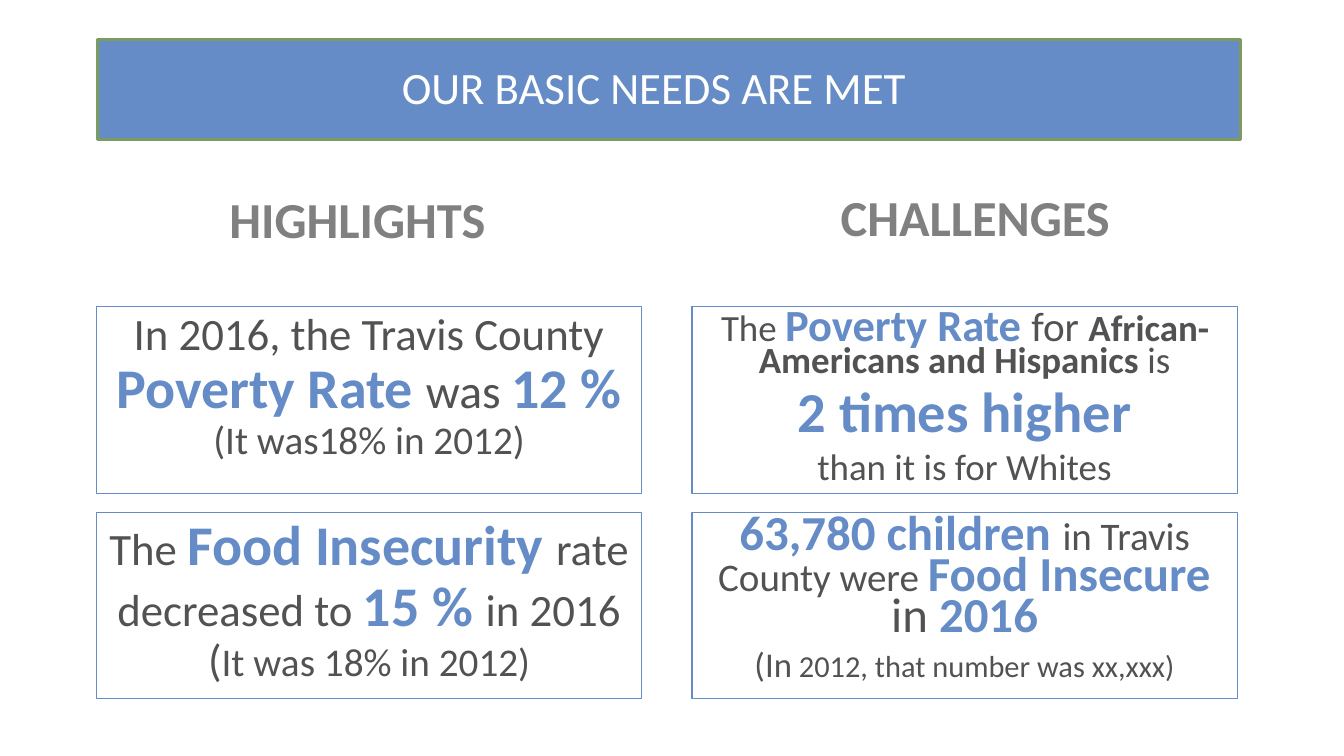
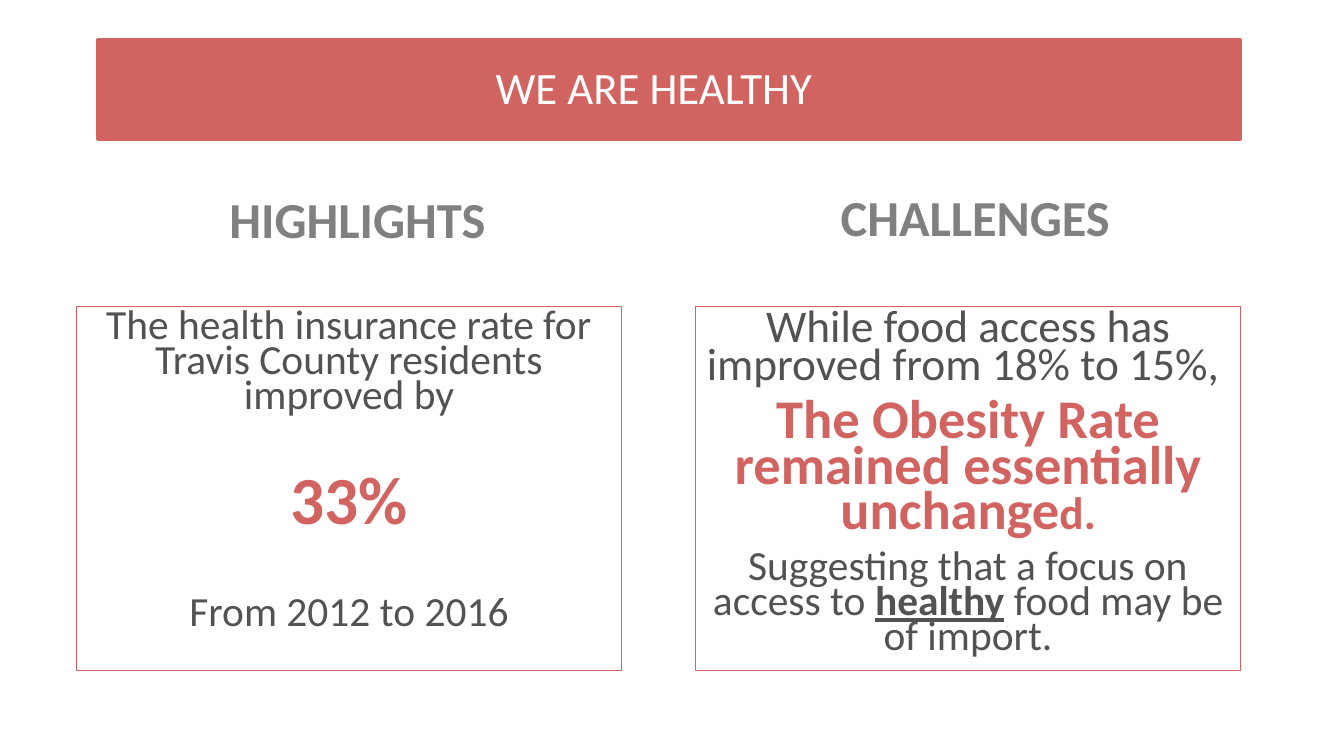
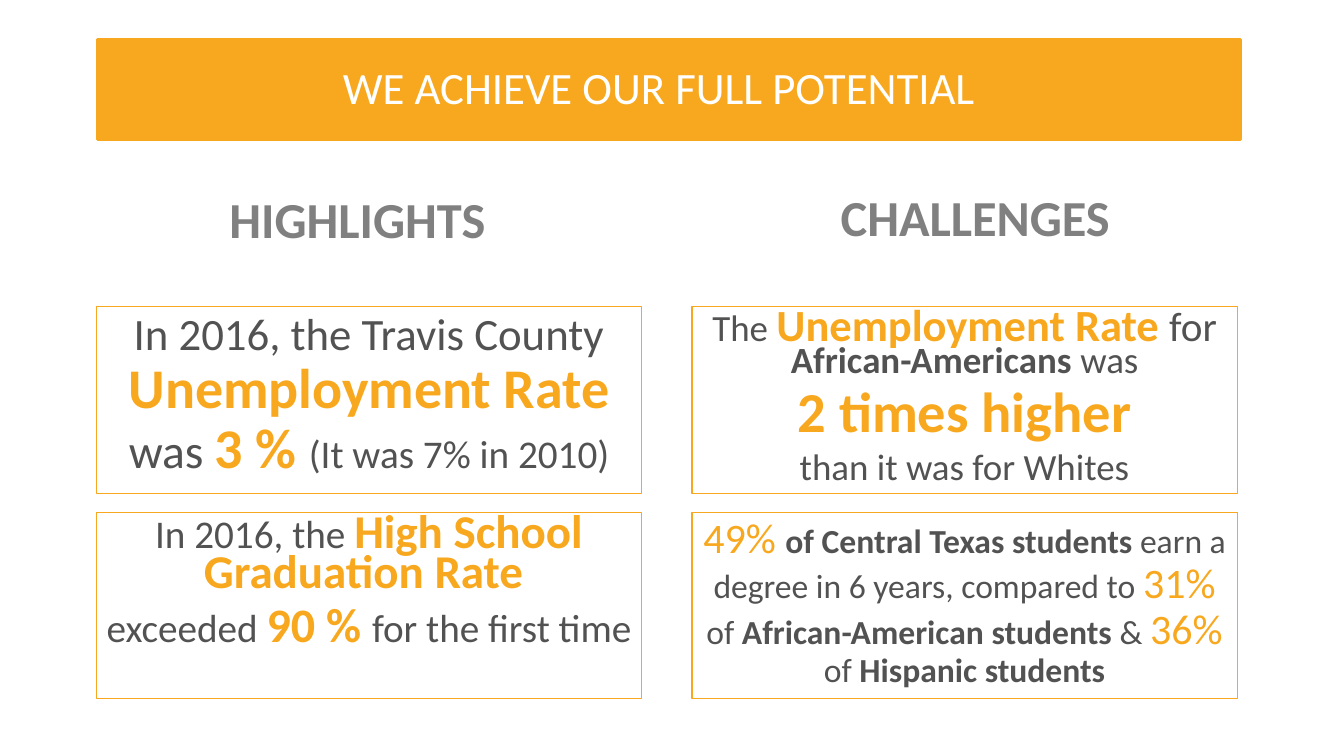
from pptx import Presentation
from pptx.dml.color import RGBColor
from pptx.enum.shapes import MSO_SHAPE
from pptx.enum.text import MSO_ANCHOR, MSO_AUTO_SIZE, PP_ALIGN
from pptx.util import Cm, Pt

FONT = "Calibri"
WHITE, HEADING_GREY, TEXT_GREY = "FFFFFF", "808080", "525252"
BLUE, GREEN, RED, ORANGE = "658CC6", "7B9B60", "D16360", "F8A81E"

# Card positions in cm: left, top, width, height
CARD_WIDTH, CARD_HEIGHT = 13.74, 4.7
GRID = [(left, top, CARD_WIDTH, CARD_HEIGHT)
        for top in (7.73, 12.91) for left in (2.43, 17.44)]
TALL_PAIR = [(left, 7.73, CARD_WIDTH, 9.17) for left in (1.93, 17.53)]

# Run styles: does the run take the accent colour, is it bold, is it underlined
STYLES = {
    "plain": (False, False, False),
    "strong": (False, True, False),
    "underlined": (False, True, True),
    "accent": (True, True, False),
    "light accent": (True, False, False),
}

# A card is its line spacing and its paragraphs.
# A paragraph is its space before and its runs (text, size, style).
SLIDES = [
    ("OUR BASIC NEEDS ARE MET ", BLUE, GREEN, GRID, [
        (0.9, [(10, [("In 2016, the Travis County ", 32, "plain"),
                     ("Poverty Rate ", 40, "accent"),
                     ("was ", 34, "plain"),
                     ("12 % ", 40, "accent"),
                     ("(It was18% in 2012)", 28, "plain")])]),
        (0.7, [(10, [("The ", 26.4, "plain"),
                     ("Poverty Rate ", 31.8, "accent"),
                     ("for ", 29.4, "plain"),
                     ("African-Americans and Hispanics ", 26.4, "strong"),
                     ("is", 26.4, "plain")]),
               (10, [("2 times higher", 40.3, "accent")]),
               (10, [("than it is for Whites", 26.4, "plain")])]),
        (0.9, [(10, [("The ", 32, "plain"),
                     ("Food Insecurity ", 40, "accent"),
                     ("rate decreased to ", 32, "plain"),
                     ("15 % ", 40, "accent"),
                     ("in 2016 (", 32, "plain"),
                     ("It was 18% in 2012)", 28, "plain")])]),
        (0.7, [(10, [("63,780 children ", 34.9, "accent"),
                     ("in Travis County were ", 27.9, "plain"),
                     ("Food Insecure", 34.9, "accent"),
                     (" in ", 34.9, "plain"),
                     ("2016", 34.9, "accent")]),
               (10, [("(In", 24.8, "plain"),
                     (" 2012, that number was xx,xxx)", 21.7, "plain")])]),
    ]),
    ("WE ARE HEALTHY ", RED, RED, TALL_PAIR, [
        (0.7, [(10, [("The health insurance rate for Travis County residents "
                      "improved by", 29.6, "plain")]),
               (45, [("33%", 48.1, "accent")]),
               (45, [("From 2012 to 2016", 29.6, "plain")])]),
        (0.7, [(10, [("While food access has improved from 18% to 15%, ",
                      32.4, "plain")]),
               (10, [("The Obesity Rate remained essentially unchange",
                      38.9, "accent"),
                     ("d.", 32.4, "accent")]),
               (10, [("Suggesting that a focus on access to ", 29.6, "plain"),
                     ("healthy", 29.6, "underlined"),
                     (" food may be of import.", 29.6, "plain")])]),
    ]),
    ("WE ACHIEVE OUR FULL POTENTIAL", ORANGE, ORANGE, GRID, [
        (0.9, [(10, [("In 2016, the Travis County ", 32, "plain"),
                     ("Unemployment Rate ", 40, "accent"),
                     ("was ", 34, "plain"),
                     ("3 % ", 40, "accent"),
                     ("(It was 7% in 2010)", 28, "plain")])]),
        (0.7, [(10, [("The ", 26.4, "plain"),
                     ("Unemployment Rate ", 31.8, "accent"),
                     ("for ", 29.4, "plain"),
                     ("African-Americans ", 26.4, "strong"),
                     ("was", 26.4, "plain")]),
               (10, [("2 times higher", 40.3, "accent")]),
               (10, [("than it was for Whites", 26.4, "plain")])]),
        (0.7, [(10, [("In 2016, the ", 28, "plain"),
                     ("High School Graduation Rate ", 33.6, "accent")]),
               (10, [("exceeded ", 28, "plain"),
                     ("90 % ", 34.3, "accent"),
                     ("for the first time", 28, "plain")])]),
        (0.9, [(10, [("49% ", 30, "light accent"),
                     ("of Central Texas students ", 24, "strong"),
                     ("earn a degree in 6 years, compared to ", 24, "plain"),
                     ("31% ", 30, "light accent"),
                     ("of ", 24, "plain"),
                     ("African-American students ", 24, "strong"),
                     ("& ", 24, "plain"),
                     ("36% ", 30, "light accent"),
                     ("of ", 24, "plain"),
                     ("Hispanic students", 24, "strong")])]),
    ]),
]


def rgb(value):
    return RGBColor.from_string(value)


def add_run(paragraph, text, size, color, bold=False, underline=False):
    paragraph.alignment = PP_ALIGN.CENTER
    run = paragraph.add_run()
    run.text = text
    font = run.font
    font.name, font.size = FONT, Pt(size)
    font.bold, font.underline = bold, underline
    font.color.rgb = rgb(color)


deck = Presentation()
deck.slide_width, deck.slide_height = Cm(33.87), Cm(19.05)
title_only = deck.slide_layouts[5]

for goal, accent, band_edge, places, cards in SLIDES:
    slide = deck.slides.add_slide(title_only)
    shapes = slide.shapes

    band = shapes.add_shape(MSO_SHAPE.RECTANGLE,
                            Cm(2.46), Cm(0.99), Cm(28.8), Cm(2.52))
    band.shadow.inherit = False
    band.fill.solid()
    band.fill.fore_color.rgb = rgb(accent)
    band.line.color.rgb = rgb(band_edge)
    band.line.width = Pt(2)

    goal_label = shapes.add_textbox(Cm(5.66), Cm(1.4), Cm(21.9), Cm(1.25))
    frame = goal_label.text_frame
    frame.word_wrap = True
    frame.margin_left = frame.margin_right = Cm(0.1)
    frame.margin_top = frame.margin_bottom = Cm(0.1)
    add_run(frame.paragraphs[0], goal, 32, WHITE)

    highlights = shapes.title
    challenges = shapes.add_textbox(0, 0, 0, 0)
    for heading, text, left, top in ((highlights, "HIGHLIGHTS", 2.41, 4.55),
                                     (challenges, "CHALLENGES", 17.98, 4.52)):
        heading.left, heading.top = Cm(left), Cm(top)
        heading.width, heading.height = Cm(13.2), Cm(2.08)
        frame = heading.text_frame
        frame.word_wrap = True
        frame.auto_size = MSO_AUTO_SIZE.NONE
        frame.vertical_anchor = MSO_ANCHOR.MIDDLE
        frame.paragraphs[0].line_spacing = 0.9
        add_run(frame.paragraphs[0], text, 36, HEADING_GREY, bold=True)

    for place, (line_spacing, paragraphs) in zip(places, cards):
        card = shapes.add_shape(MSO_SHAPE.RECTANGLE, *map(Cm, place))
        card.shadow.inherit = False
        card.fill.background()
        card.line.color.rgb = rgb(accent)
        card.line.width = Pt(0.75)
        frame = card.text_frame
        frame.word_wrap = True
        frame.vertical_anchor = MSO_ANCHOR.TOP
        for number, (space_before, runs) in enumerate(paragraphs):
            paragraph = frame.add_paragraph() if number else frame.paragraphs[0]
            paragraph.line_spacing = line_spacing
            paragraph.space_before = Pt(space_before)
            for text, size, style in runs:
                accented, bold, underline = STYLES[style]
                add_run(paragraph, text, size,
                        accent if accented else TEXT_GREY, bold, underline)

deck.save("out.pptx")
